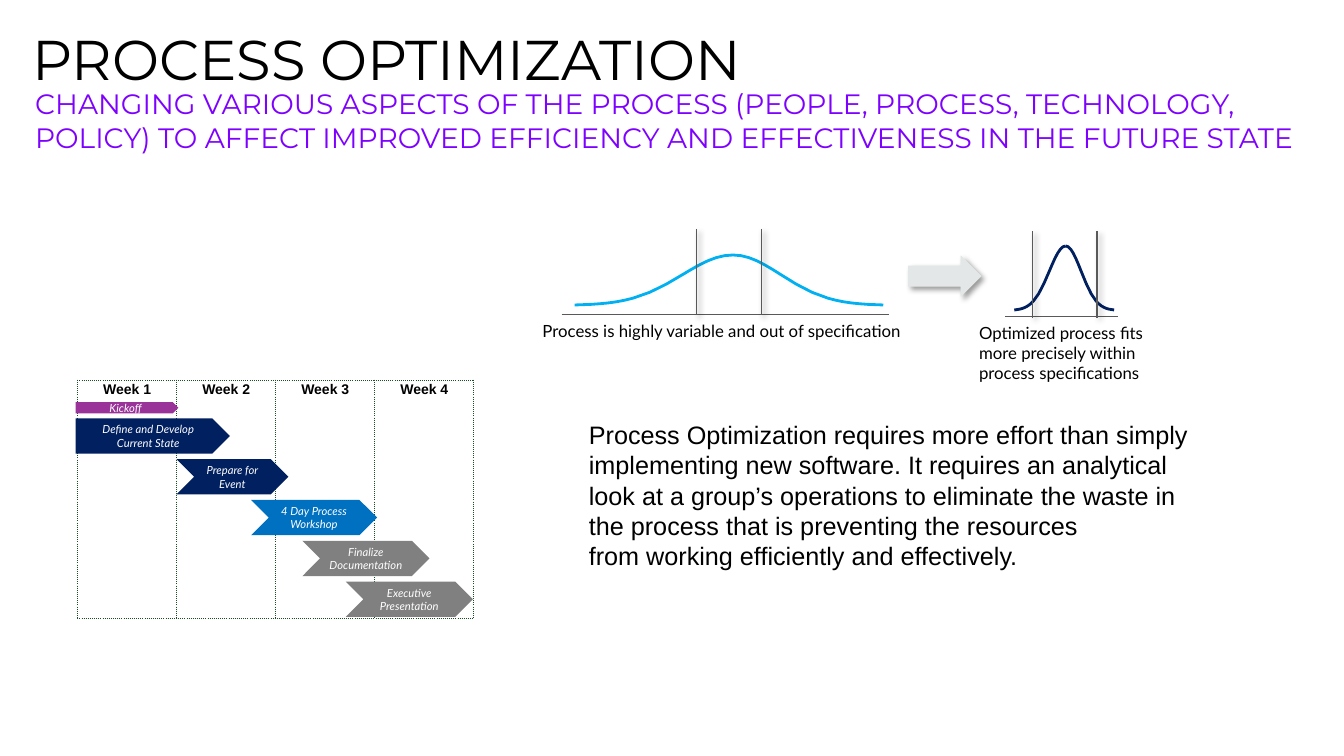
from math import exp

from lxml import etree
from pptx import Presentation
from pptx import util as u
from pptx.dml.color import RGBColor
from pptx.enum import dml, shapes, text
from pptx.oxml import parse_xml
from pptx.oxml.ns import nsdecls, qn

WIDTH, HEIGHT = u.Inches(13.33), u.Inches(7.5)
COLUMNS, ROWS = 133.3, 75

BLACK, WHITE, PURPLE = "000000", "FFFFFF", "7E00FF"
NAVY, BLUE, SKY, GRAY = "002060", "0070C0", "00B0F0", "808080"
MAGENTA, AXIS, SILVER, GREEN = "993399", "595959", "E4E7E7", "1A4E26"

PENTAGON, CHEVRON = shapes.MSO_SHAPE.PENTAGON, shapes.MSO_SHAPE.CHEVRON
CURVE_STEPS = [0, 2, 3, 4, 5, 6, 7, 9, 11, 13, 14, 15, 16, 17, 18, 19]
CURVE_SPREAD = 0.32

INTRO = [
    "Process Optimization requires more effort than simply implementing new software. "
    "It requires an analytical look at a group’s operations to eliminate the waste "
    "in the process that is preventing the resources",
    "from working efficiently and effectively.",
]
SUBTITLE = (
    "CHANGING VARIOUS ASPECTS OF THE PROCESS (PEOPLE, PROCESS, TECHNOLOGY, POLICY) "
    "TO AFFECT IMPROVED EFFICIENCY AND EFFECTIVENESS IN THE FUTURE STATE"
)


def across(columns):
    return round(WIDTH * columns / COLUMNS)


def down(rows):
    return round(HEIGHT * rows / ROWS)


def box(left, top, width, height):
    return across(left), down(top), across(width), down(height)


def color(hex_string):
    return RGBColor.from_string(hex_string)


def set_line(line, hex_string, points):
    line.color.rgb = color(hex_string)
    line.width = u.Pt(points)


def set_effects(shape, shadow=False):
    effects = etree.SubElement(shape._element.spPr, qn("a:effectLst"))
    if shadow:
        effects.append(parse_xml(
            f'<a:outerShdw {nsdecls("a")} blurRad="50800" dist="38100" dir="2700000" '
            'algn="tl" rotWithShape="0"><a:srgbClr val="000000">'
            '<a:alpha val="40000"/></a:srgbClr></a:outerShdw>'))


def write(frame, lines, font, size, hex_string, bold=False, italic=False,
          align=None, spacing=None, after=None):
    frame.text = "\n".join(lines)
    for paragraph in frame.paragraphs:
        paragraph.alignment = align
        paragraph.line_spacing = spacing
        paragraph.space_after = after
        for run in paragraph.runs:
            run.font.name = font
            run.font.size = u.Pt(size)
            run.font.color.rgb = color(hex_string)
            run.font.bold = bold
            run.font.italic = italic


def set_margins(target, left, top, right, bottom):
    target.margin_left, target.margin_right = across(left), across(right)
    target.margin_top, target.margin_bottom = down(top), down(bottom)


def add_text(slide, place, lines, font, size, hex_string=BLACK,
             margins=(0.4, 0.4, 0.4, 0.4), spacing=None):
    frame = slide.shapes.add_textbox(*box(*place)).text_frame
    frame.word_wrap = True
    set_margins(frame, *margins)
    write(frame, lines, font, size, hex_string, spacing=spacing)
    return frame


def add_bar(slide, kind, place, label, fill):
    bar = slide.shapes.add_shape(kind, *box(*place))
    bar.fill.solid()
    bar.fill.fore_color.rgb = color(fill)
    bar.line.fill.background()
    set_effects(bar)
    frame = bar.text_frame
    frame.word_wrap = True
    frame.vertical_anchor = text.MSO_ANCHOR.MIDDLE
    set_margins(frame, 0.8, 0.8, 0.8, 0.8)
    write(frame, [label], "Lato", 8, WHITE, italic=True,
          align=text.PP_ALIGN.CENTER, after=u.Pt(3))


def set_borders(cell):
    properties = cell._tc.get_or_add_tcPr()
    for position, side in enumerate(("lnL", "lnR", "lnT", "lnB")):
        properties.insert(position, parse_xml(
            f'<a:{side} {nsdecls("a")} w="6350"><a:solidFill><a:srgbClr val="{GREEN}"/>'
            f'</a:solidFill><a:prstDash val="sysDot"/></a:{side}>'))


def add_weeks(slide, place, count):
    table = slide.shapes.add_table(1, count, *box(*place)).table
    table.first_row = table.horz_banding = False
    for number, cell in enumerate(table.rows[0].cells, 1):
        cell.fill.background()
        set_margins(cell, 0, 0.4, 0, 0)
        write(cell.text_frame, [f"Week {number}"], "Arial", 10, BLACK, bold=True,
              align=text.PP_ALIGN.CENTER, spacing=0.85)
        set_borders(cell)


def add_line(slide, start, end, shadow=False):
    line = slide.shapes.add_connector(
        shapes.MSO_CONNECTOR.STRAIGHT, across(start[0]), down(start[1]),
        across(end[0]), down(end[1]))
    set_line(line.line, AXIS, 1)
    set_effects(line, shadow)


def add_half_curve(slide, peak, base, height, reach, hex_string):
    points = []
    for step in CURVE_STEPS:
        distance = 1 - step / CURVE_STEPS[-1]
        level = exp(-(distance / CURVE_SPREAD) ** 2 / 2)
        points.append((across(peak + reach * distance), down(base - height * level)))
    builder = slide.shapes.build_freeform(*points[0])
    builder.add_line_segments(points[1:], close=False)
    curve = builder.convert_to_shape()
    curve.fill.background()
    set_line(curve.line, hex_string, 2)
    set_effects(curve)


def add_distribution(slide, axis, axis_row, peak, reaches, base, height, limits, top, hex_string):
    for reach in reaches:
        add_half_curve(slide, peak, base, height, reach, hex_string)
    add_line(slide, (axis[0], axis_row), (axis[1], axis_row))
    for limit in limits:
        add_line(slide, (limit, top), (limit, top + 8.6), shadow=True)


def add_arrow(slide, place):
    arrow = slide.shapes.add_shape(shapes.MSO_SHAPE.RIGHT_ARROW, *box(*place))
    arrow.fill.solid()
    arrow.fill.fore_color.rgb = color(SILVER)
    set_line(arrow.line, SILVER, 0.5)
    arrow.line.dash_style = dml.MSO_LINE.SOLID
    set_effects(arrow, shadow=True)


def add_schedule(slide):
    add_weeks(slide, (7.7, 37.7, 39.3, 23.6), 4)
    add_bar(slide, PENTAGON, (7.5, 39.9, 10.2, 1.1), "Kickoff", MAGENTA)
    tasks = [
        (PENTAGON, 7.5, 15.3, "Define and Develop Current State", NAVY),
        (CHEVRON, 17.5, 11.1, "Prepare for Event", NAVY),
        (CHEVRON, 24.9, 12.5, "4 Day Process Workshop", BLUE),
        (CHEVRON, 30, 12.6, "Finalize Documentation", GRAY),
        (CHEVRON, 34.3, 12.6, "Executive Presentation", GRAY),
    ]
    for row, (kind, left, width, label, fill) in enumerate(tasks):
        add_bar(slide, kind, (left, 41.5 + 4.05 * row, width, 3.5), label, fill)


def main():
    presentation = Presentation()
    presentation.slide_width, presentation.slide_height = WIDTH, HEIGHT
    slide = presentation.slides.add_slide(presentation.slide_layouts[6])
    title = add_text(slide, (3.2, 3.4, 104.4, 5.8), ["PROCESS OPTIMIZATION"],
                     "Montserrat", 40, margins=(0, 0.5, 0, 0), spacing=0.7)
    title.vertical_anchor = text.MSO_ANCHOR.MIDDLE
    add_text(slide, (2.5, 8.1, 127.7, 11.1), [SUBTITLE], "Montserrat", 20, PURPLE,
             margins=(1, 0.5, 1, 0.5))
    add_schedule(slide)
    add_distribution(slide, (55.7, 88.2), 31.2, 72.7, (-15.7, 14.9), 30.3, 5,
                     (69.1, 75.5), 22.7, SKY)
    add_arrow(slide, (90.1, 25.4, 7.2, 4))
    add_distribution(slide, (99.7, 110.9), 31.4, 105.7, (-5.1, 4.8), 30.8, 6.4,
                     (102.4, 108.8), 22.9, NAVY)
    add_text(slide, (53.4, 31.4, 40.5, 2.8),
             ["Process is highly variable and out of specification"], "Lato", 12)
    add_text(slide, (96.7, 31.6, 17.8, 8.9),
             ["Optimized process fits more precisely within process specifications"], "Lato", 12)
    add_text(slide, (58, 41.2, 63.1, 15.9), INTRO, "Arial", 18)
    presentation.save("out.pptx")


if __name__ == "__main__":
    main()
